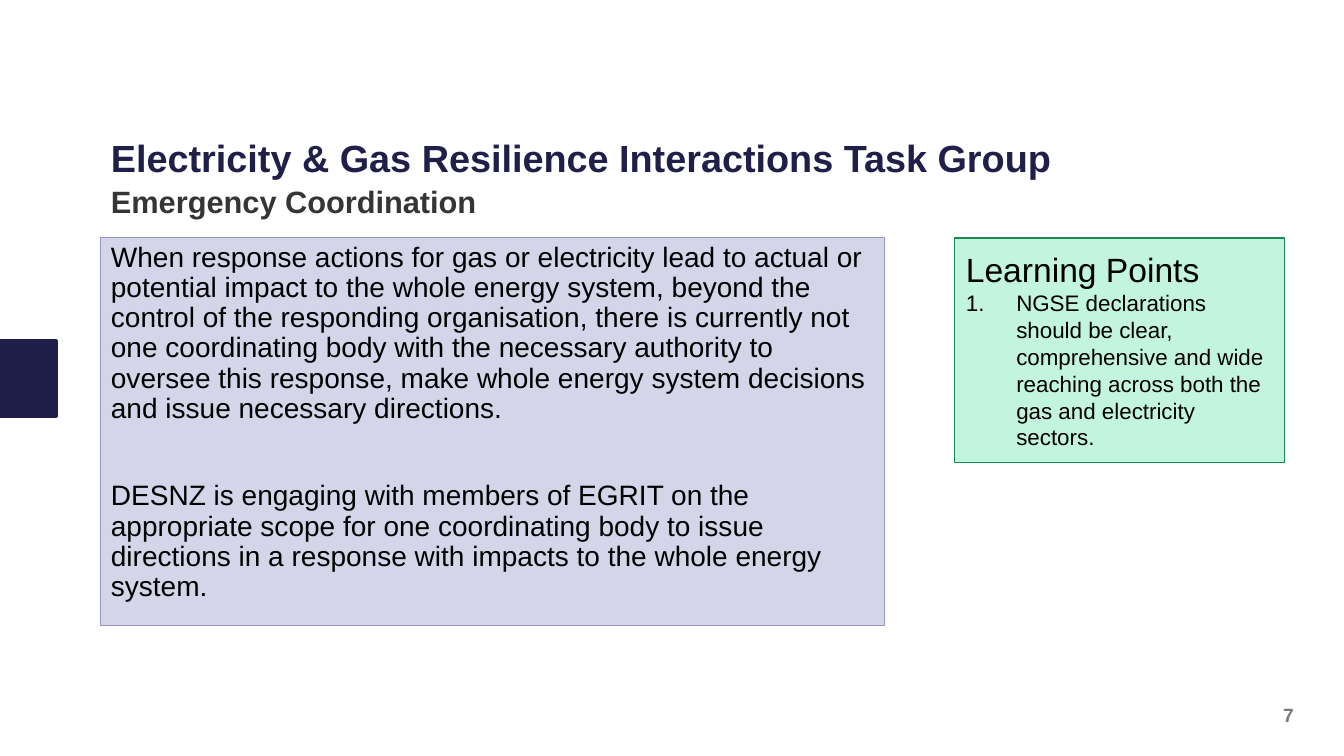
from dataclasses import dataclass

from lxml.etree import SubElement
from pptx import Presentation
from pptx.dml.color import RGBColor
from pptx.enum.shapes import MSO_SHAPE as Shape
from pptx.enum.text import MSO_ANCHOR as Anchor, MSO_AUTO_SIZE as AutoSize, PP_ALIGN as Align
from pptx.oxml.ns import qn
from pptx.util import Inches, Pt


@dataclass(frozen=True)
class Theme:
    font: str = "Arial"
    navy: str = "201F4A"
    charcoal: str = "363535"
    grey: str = "7A7A7A"
    black: str = "000000"
    lilac: str = "D5D5E9"
    lilac_line: str = "9696C9"
    mint: str = "C3F5DE"
    mint_line: str = "178B55"
    title: float = 27
    subtitle: float = 22
    body: float = 20
    heading: float = 24
    point: float = 16
    number: float = 13.7


def rgb(value):
    return RGBColor.from_string(value)


def write(p, text, *, font, size, color, bold=False, align=Align.LEFT,
          spacing=1.0, before=0, number=False):
    """Fill one paragraph and format it."""
    pPr = p._p.get_or_add_pPr()
    hang = Inches(0.5) if number else 0
    pPr.set("marL", str(hang))
    pPr.set("indent", str(-hang))
    if number:
        SubElement(pPr, qn("a:buFont"), typeface="+mj-lt")
        SubElement(pPr, qn("a:buAutoNum"), type="arabicPeriod")
    else:
        SubElement(pPr, qn("a:buNone"))
    p.alignment = align
    p.line_spacing = spacing
    p.space_before, p.space_after = Pt(before), Pt(0)
    r = p.add_run()
    r.text = text
    r.font.name, r.font.size, r.font.bold = font, Pt(size), bold
    r.font.color.rgb = rgb(color)


class SlideBuilder:
    def __init__(self, prs, theme):
        self.theme = theme
        self.slide = prs.slides.add_slide(prs.slide_layouts.get_by_name("Comparison"))

    def place(self, sp, box):
        sp.left, sp.top, sp.width, sp.height = map(Inches, box)

    def paint(self, sp, fill, line, weight):
        sp.fill.solid()
        sp.fill.fore_color.rgb = rgb(fill)
        sp.line.color.rgb = rgb(line)
        sp.line.width = Pt(weight)

    def fill_text(self, sp, items, anchor=Anchor.TOP, inset=(0.1, 0.05)):
        tf = sp.text_frame
        tf.word_wrap, tf.auto_size = True, AutoSize.NONE
        tf.vertical_anchor = anchor
        tf.margin_left = tf.margin_right = Inches(inset[0])
        tf.margin_top = tf.margin_bottom = Inches(inset[1])
        for i, (text, style) in enumerate(items):
            p = tf.add_paragraph() if i else tf.paragraphs[0]
            write(p, text, font=self.theme.font, **style)

    def placeholder(self, idx, box, items, **frame):
        sp = next(ph for ph in self.slide.placeholders
                  if ph.placeholder_format.idx == idx)
        self.place(sp, box)
        self.fill_text(sp, items, **frame)
        return sp

    def panel(self, box, fill, line, weight, items=(), **frame):
        sp = self.slide.shapes.add_shape(Shape.RECTANGLE, *map(Inches, box))
        sp.shadow.inherit = False
        self.paint(sp, fill, line, weight)
        if items:
            self.fill_text(sp, items, **frame)

    def label(self, box, items):
        self.fill_text(self.slide.shapes.add_textbox(*map(Inches, box)), items)

    def drop_empty(self):
        for ph in list(self.slide.placeholders):
            if not ph.text_frame.text:
                ph._element.getparent().remove(ph._element)


def main():
    prs = Presentation()
    prs.slide_width, prs.slide_height = Inches(13.33), Inches(7.5)
    t = Theme()
    s = SlideBuilder(prs, t)

    # Side marker and page number
    s.panel((0, 3.38, 0.56, 0.75), t.navy, t.navy, 2)
    s.label((12.54, 6.93, 0.39, 0.28),
            [("7", dict(size=t.number, color=t.grey, bold=True, align=Align.RIGHT))])

    # Title and subtitle
    s.placeholder(0, (1, 1.31, 10.43, 0.56), [
        ("Electricity & Gas Resilience Interactions Task Group",
         dict(size=t.title, color=t.navy, bold=True, spacing=0.9))], anchor=Anchor.MIDDLE)
    s.placeholder(1, (1, 1.8, 9.08, 0.56), [
        ("Emergency Coordination",
         dict(size=t.subtitle, color=t.charcoal, bold=True, spacing=0.9))])

    # Main statement
    body = dict(size=t.body, color=t.black, spacing=0.9)
    statement = s.placeholder(2, (1, 2.36, 7.77, 3.85), [
        ("When response actions for gas or electricity lead to actual or potential "
         "impact to the whole energy system, beyond the control of the responding "
         "organisation, there is currently not one coordinating body with the necessary "
         "authority to oversee this response, make whole energy system decisions and "
         "issue necessary directions.", body),
        ("DESNZ is engaging with members of EGRIT on the appropriate scope for one "
         "coordinating body to issue directions in a response with impacts to the whole "
         "energy system.", dict(body, before=41))])
    s.paint(statement, t.lilac, t.lilac_line, 0.75)

    # Learning points
    s.panel((9.47, 2.36, 3.27, 2.23), t.mint, t.mint_line, 1, [
        ("Learning Points", dict(size=t.heading, color=t.black)),
        ("NGSE declarations should be clear, comprehensive and wide reaching across "
         "both the gas and electricity sectors.",
         dict(size=t.point, color=t.black, number=True))], inset=(0.11, 0.11))

    s.drop_empty()
    prs.save("out.pptx")


if __name__ == "__main__":
    main()
